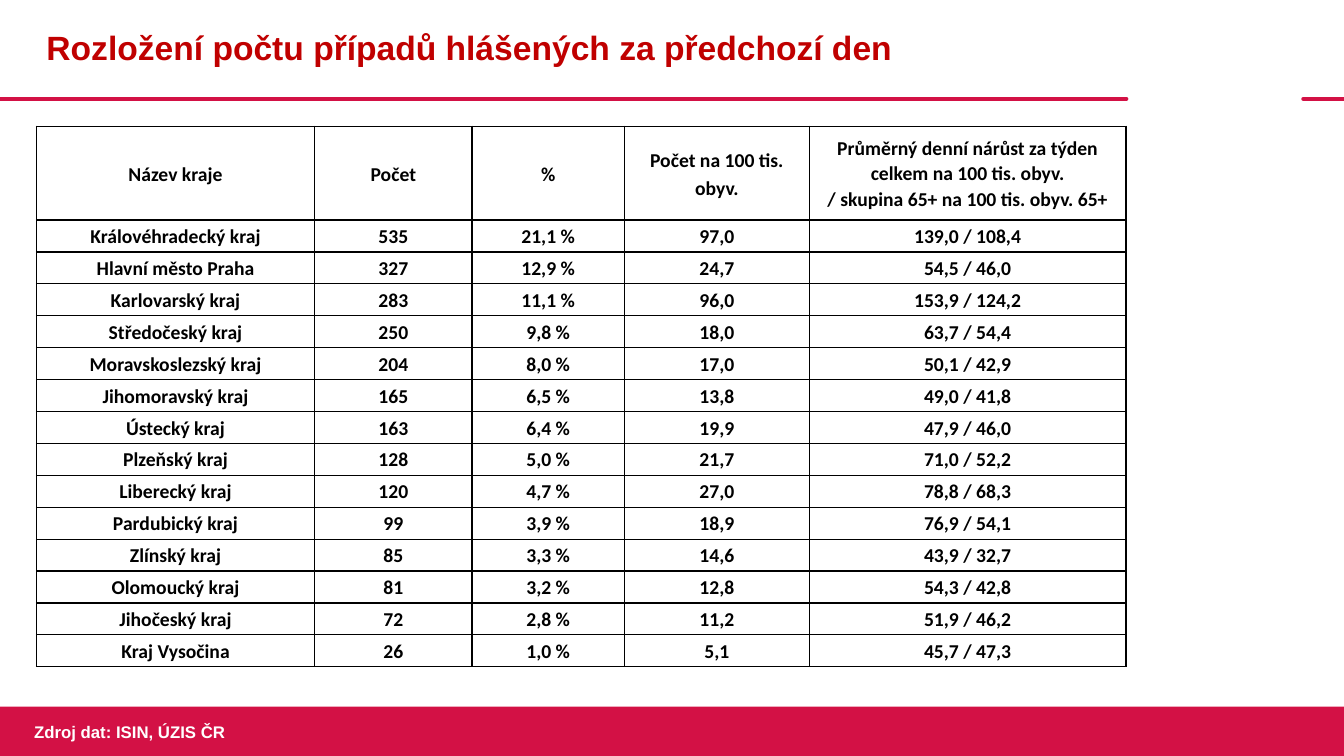
from lxml import etree
from pptx import Presentation
from pptx.dml.color import RGBColor
from pptx.enum.shapes import MSO_CONNECTOR, MSO_SHAPE
from pptx.enum.text import MSO_ANCHOR, PP_ALIGN
from pptx.oxml.ns import qn
from pptx.util import Pt

STRAIGHT = MSO_CONNECTOR.STRAIGHT
RECTANGLE = MSO_SHAPE.RECTANGLE
MIDDLE = MSO_ANCHOR.MIDDLE
LEFT, CENTER = PP_ALIGN.LEFT, PP_ALIGN.CENTER

CRIMSON, DARK_RED, BLACK, WHITE = "D31145", "C00000", "000000", "FFFFFF"
TITLE_ONLY = 5
COLUMN_WIDTHS = [198.8, 112.4, 108.8, 132.2, 226.1]
HEADER_HEIGHT, ROW_HEIGHT = 67, 22.8

HEADERS = [
    "Název kraje", "Počet", "%", "Počet na 100 tis. obyv.",
    "Průměrný denní nárůst za týden celkem na 100 tis. obyv.\n"
    "/ skupina 65+ na 100 tis. obyv. 65+",
]
REGIONS = [
    ("Královéhradecký kraj", "535", "21,1 %", "97,0", "139,0 / 108,4"),
    ("Hlavní město Praha", "327", "12,9 %", "24,7", "54,5 / 46,0"),
    ("Karlovarský kraj", "283", "11,1 %", "96,0", "153,9 / 124,2"),
    ("Středočeský kraj", "250", "9,8 %", "18,0", "63,7 / 54,4"),
    ("Moravskoslezský kraj", "204", "8,0 %", "17,0", "50,1 / 42,9"),
    ("Jihomoravský kraj", "165", "6,5 %", "13,8", "49,0 / 41,8"),
    ("Ústecký kraj", "163", "6,4 %", "19,9", "47,9 / 46,0"),
    ("Plzeňský kraj", "128", "5,0 %", "21,7", "71,0 / 52,2"),
    ("Liberecký kraj", "120", "4,7 %", "27,0", "78,8 / 68,3"),
    ("Pardubický kraj", "99", "3,9 %", "18,9", "76,9 / 54,1"),
    ("Zlínský kraj", "85", "3,3 %", "14,6", "43,9 / 32,7"),
    ("Olomoucký kraj", "81", "3,2 %", "12,8", "54,3 / 42,8"),
    ("Jihočeský kraj", "72", "2,8 %", "11,2", "51,9 / 46,2"),
    ("Kraj Vysočina", "26", "1,0 %", "5,1", "45,7 / 47,3"),
]


def color(value):
    """Turn a hex string into a colour."""
    return RGBColor.from_string(value)


def write(paragraph, text, size, font_name, font_color, alignment, spacing=1.0):
    """Add one bold run to a paragraph and format both."""
    paragraph.alignment = alignment
    paragraph.line_spacing = spacing
    run = paragraph.add_run()
    run.text = text
    run.font.size = Pt(size)
    run.font.name = font_name
    run.font.bold = True
    run.font.color.rgb = color(font_color)


def add_title(slide, left, top, width, height):
    """Place and fill the title placeholder."""
    title = slide.shapes.title
    title.left, title.top, title.width, title.height = map(Pt, (left, top, width, height))
    frame = title.text_frame
    frame.word_wrap = True
    frame.vertical_anchor = MIDDLE
    write(frame.paragraphs[0], "Rozložení počtu případů hlášených za předchozí den",
          24, "Arial", DARK_RED, LEFT, 0.9)


def add_rule(slide, left, top, width):
    """Draw a horizontal crimson rule with round ends."""
    rule = slide.shapes.add_connector(STRAIGHT, Pt(left), Pt(top), Pt(left + width), Pt(top))
    rule.line.color.rgb = color(CRIMSON)
    rule.line.width = Pt(3)
    rule.line._get_or_add_ln().set("cap", "rnd")
    etree.SubElement(rule._element.spPr, qn("a:effectLst"))


def add_borders(cell):
    """Give a cell a thin black line on each side."""
    properties = cell._tc.get_or_add_tcPr()
    for side in ("a:lnL", "a:lnR", "a:lnT", "a:lnB"):
        line = etree.SubElement(properties, qn(side), w=str(Pt(1)))
        fill = etree.SubElement(line, qn("a:solidFill"))
        etree.SubElement(fill, qn("a:srgbClr"), val=BLACK)


def fill_cell(cell, text, spacing):
    """Write and format one table cell."""
    add_borders(cell)
    cell.fill.background()
    cell.vertical_anchor = MIDDLE
    cell.margin_left = cell.margin_right = Pt(5)
    cell.margin_top = cell.margin_bottom = Pt(0)
    frame = cell.text_frame
    for index, line in enumerate(text.split("\n")):
        paragraph = frame.add_paragraph() if index else frame.paragraphs[0]
        write(paragraph, line, 14, "Calibri", BLACK, CENTER, spacing)


def add_region_table(slide, left, top):
    """Build the table of cases by region."""
    rows = [HEADERS, *REGIONS]
    height = HEADER_HEIGHT + ROW_HEIGHT * len(REGIONS)
    frame = slide.shapes.add_table(len(rows), len(HEADERS), Pt(left), Pt(top),
                                   Pt(sum(COLUMN_WIDTHS)), Pt(height))
    table = frame.table
    table.first_row = table.horz_banding = False
    for column, width in zip(table.columns, COLUMN_WIDTHS):
        column.width = Pt(width)
    for row_index, values in enumerate(rows):
        table.rows[row_index].height = Pt(ROW_HEIGHT if row_index else HEADER_HEIGHT)
        for column_index, text in enumerate(values):
            is_short_header = row_index == 0 and column_index < len(HEADERS) - 1
            fill_cell(table.cell(row_index, column_index), text,
                      1.15 if is_short_header else 1.07)


def add_footer(slide, left, top, width, height):
    """Draw the footer band with the data source."""
    band = slide.shapes.add_shape(RECTANGLE, Pt(left), Pt(top), Pt(width), Pt(height))
    band.shadow.inherit = False
    band.fill.solid()
    band.fill.fore_color.rgb = color(CRIMSON)
    band.line.fill.background()
    source = slide.shapes.add_textbox(Pt(left + 17.3), Pt(top + 7.2), Pt(152.6), Pt(21.8))
    source.text_frame.word_wrap = False
    write(source.text_frame.paragraphs[0], "Zdroj dat: ISIN, ÚZIS ČR", 12, "Arial", WHITE, LEFT)


def main():
    """Build and save the presentation."""
    presentation = Presentation()
    presentation.slide_width, presentation.slide_height = Pt(960), Pt(540)
    slide = presentation.slides.add_slide(presentation.slide_layouts[TITLE_ONLY])
    add_rule(slide, 0, 70.6, 804.5)
    add_rule(slide, 931, 70.6, 29)
    add_title(slide, 26, 0, 778.3, 70.6)
    add_region_table(slide, 26, 90.2)
    add_footer(slide, 0, 504.7, 960, 35.3)
    presentation.save("out.pptx")


if __name__ == "__main__":
    main()
